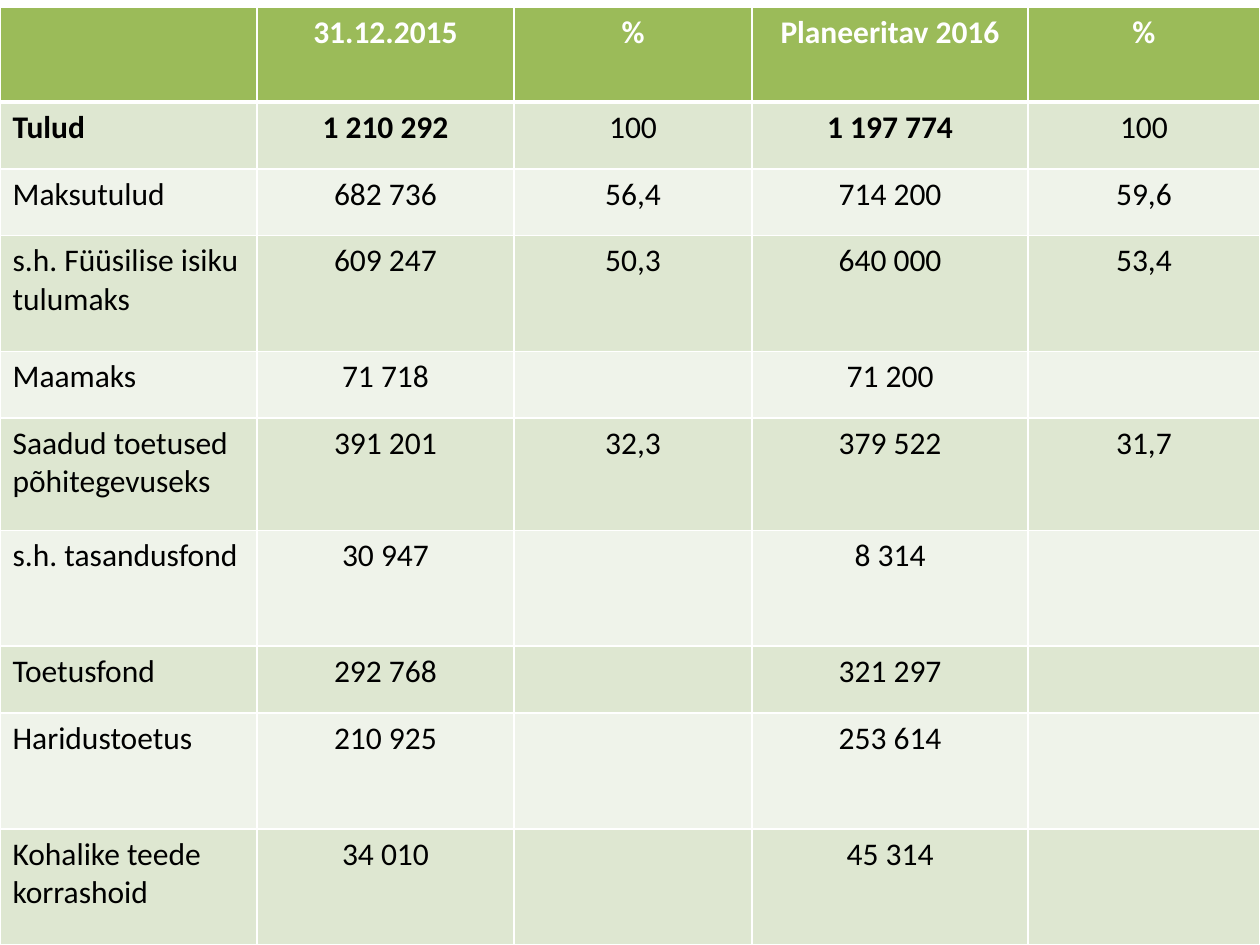
"""Build a one-slide table of municipal revenue for 2015 and 2016."""
from pptx import Presentation
from pptx.dml.color import RGBColor
from pptx.enum.text import PP_ALIGN
from pptx.oxml.ns import qn
from pptx.util import Inches, Pt
from lxml.etree import SubElement

COLUMN_WIDTHS = [2.04, 2.04, 1.89, 2.19, 1.84]
HEADER, SHORT, MEDIUM, TALL = 0.75, 0.53, 0.89, 0.92
ROWS = [
    (HEADER, ["", "31.12.2015", "%", "Planeeritav 2016", "%"]),
    (SHORT, ["Tulud", "1 210 292", "100", "1 197 774", "100"]),
    (SHORT, ["Maksutulud", "682 736", "56,4", "714 200", "59,6"]),
    (TALL, ["s.h. Füüsilise isiku tulumaks", "609 247", "50,3", "640 000", "53,4"]),
    (SHORT, ["Maamaks", "71 718", "", "71 200", ""]),
    (MEDIUM, ["Saadud toetused põhitegevuseks", "391 201", "32,3", "379 522", "31,7"]),
    (TALL, ["s.h. tasandusfond", "30 947", "", "8 314", ""]),
    (SHORT, ["Toetusfond", "292 768", "", "321 297", ""]),
    (TALL, ["Haridustoetus", "210 925", "", "253 614", ""]),
    (TALL, ["Kohalike teede korrashoid", "34 010", "", "45 314", ""]),
]
BOLD_TOTALS = (0, 1, 3)


def write_cell(cell, text, fill, color="000000", bold=False, align=PP_ALIGN.CENTER):
    cell.fill.solid()
    cell.fill.fore_color.rgb = RGBColor.from_string(fill)
    para = cell.text_frame.paragraphs[0]
    para.alignment = align
    para.font.size = Pt(18)
    if text:
        span = para.add_run()
        span.text = text
        span.font.name = "Calibri"
        span.font.size = Pt(18)
        span.font.bold = bold
        span.font.color.rgb = RGBColor.from_string(color)


def add_borders(cell, top=1, bottom=1):
    properties = cell._tc.get_or_add_tcPr()
    for side, width in (("L", 1), ("R", 1), ("T", top), ("B", bottom)):
        line = SubElement(properties, qn(f"a:ln{side}"), w=str(Pt(width)))
        SubElement(SubElement(line, qn("a:solidFill")), qn("a:srgbClr"), val="FFFFFF")


deck = Presentation()
deck.slide_width, deck.slide_height = Inches(10), Inches(7.5)
page = deck.slides.add_slide(deck.slide_layouts[6])

table_height = sum(height for height, texts in ROWS)
table = page.shapes.add_table(
    len(ROWS), len(COLUMN_WIDTHS), 0, deck.slide_height - Inches(table_height),
    deck.slide_width, Inches(table_height),
).table
for column, width in zip(table.columns, COLUMN_WIDTHS):
    column.width = Inches(width)

for row_index, (height, texts) in enumerate(ROWS):
    table.rows[row_index].height = Inches(height)
    is_header = row_index == 0
    fill = "9BBB59" if is_header else ("EFF3EA", "DEE7D1")[row_index % 2]
    for column_index, text in enumerate(texts):
        cell = table.cell(row_index, column_index)
        add_borders(cell, top=3 if row_index == 1 else 1, bottom=3 if is_header else 1)
        write_cell(
            cell, text, fill,
            color="FFFFFF" if is_header else "000000",
            bold=is_header or (row_index == 1 and column_index in BOLD_TOTALS),
            align=PP_ALIGN.LEFT if column_index == 0 else PP_ALIGN.CENTER,
        )

deck.save("out.pptx")
